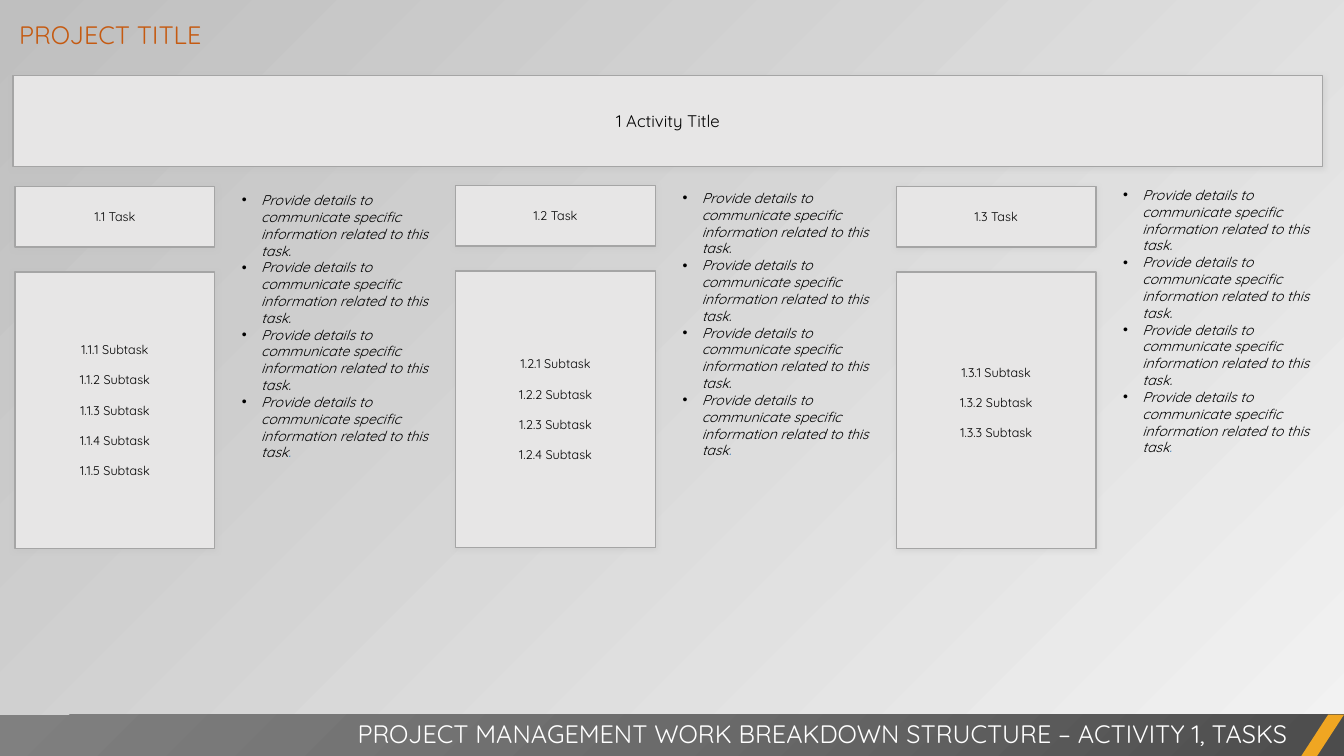
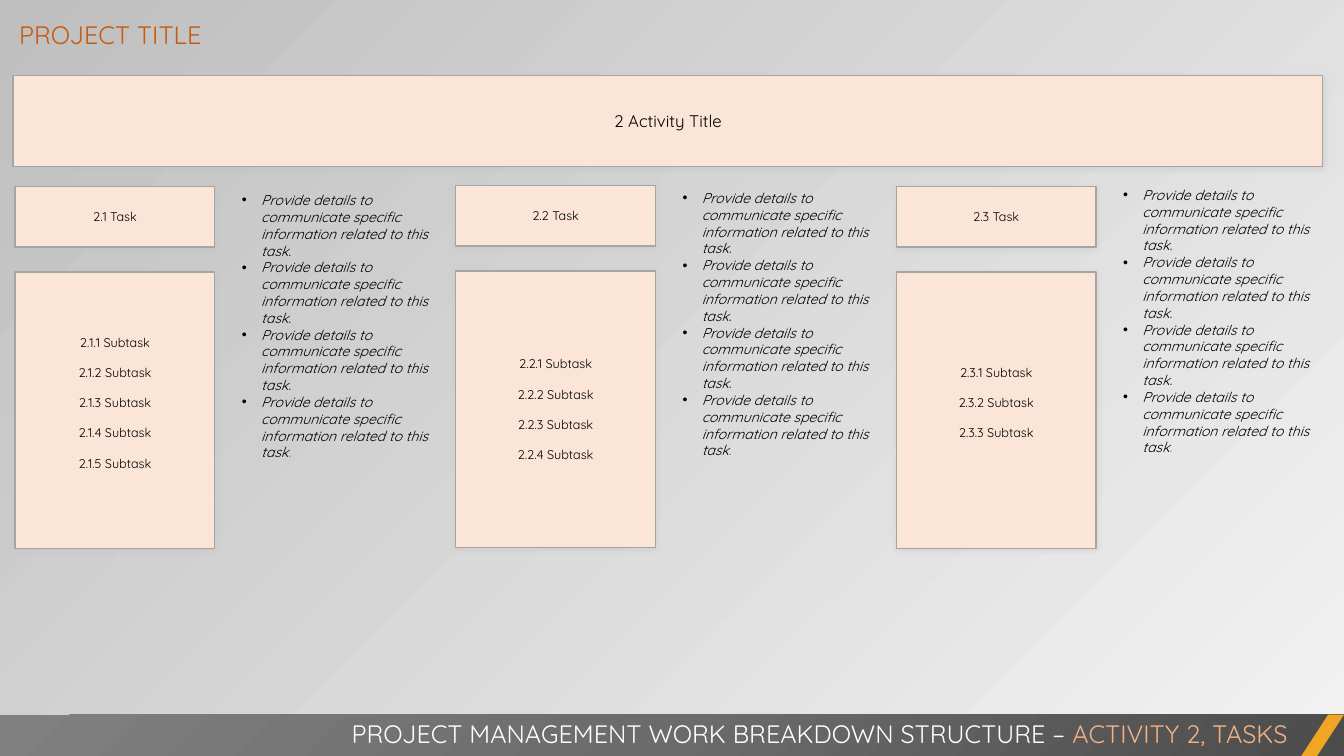
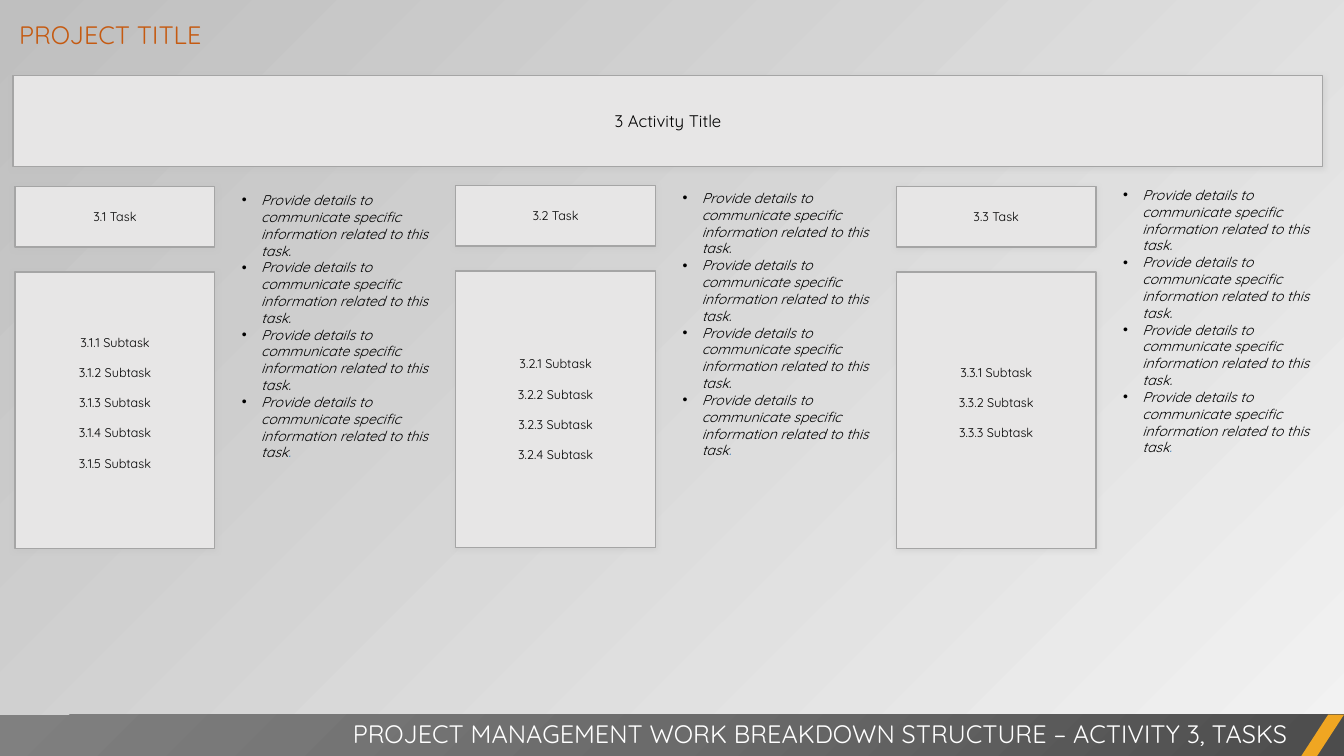
import dataclasses

import pptx
import pptx.dml.color
import pptx.enum.shapes
import pptx.enum.text
import pptx.oxml
import pptx.oxml.ns
import pptx.util

Inches, Pt = pptx.util.Inches, pptx.util.Pt
RGB = pptx.dml.color.RGBColor.from_string
SHAPE = pptx.enum.shapes.MSO_SHAPE
ALIGN = pptx.enum.text.PP_ALIGN
ANCHOR = pptx.enum.text.MSO_ANCHOR
NS = pptx.oxml.ns.nsdecls("a")


@dataclasses.dataclass(frozen=True)
class Theme:
    font: str = "Quicksand"
    head: int = 18
    lead: int = 12
    note: int = 10
    task: int = 9
    black: str = "000000"
    white: str = "FFFFFF"
    grey: str = "E7E6E6"
    peach: str = "FBE5D6"
    edge: str = "A5A5A5"
    rust: str = "C55A11"
    salmon: str = "F4B183"
    blue: str = "2E75B6"
    gold: str = "F0A622"
    light: str = "F2F2F2"
    dark: str = "BFBFBF"
    band: tuple = ("4C4C4C", "6B6B6B", "808080")


theme = Theme()
WIDE, HIGH = 13.33, 7.5
PITCH, LEFT, WIDTH = 4.37, 0.15, 1.98
FOOT, DEEP = 7.09, 0.42
COLS = [LEFT + PITCH * n for n in range(3)]
TASK_TOPS = (1.85, 1.84, 1.85)
NOTE_TOPS = (1.85, 1.83, 1.8)
COUNTS = (5, 4, 3)
NOTE = "Provide details to communicate specific information related to this task"
HEAD = "PROJECT MANAGEMENT WORK BREAKDOWN STRUCTURE – "


def ink(frame, size, color, align=ALIGN.LEFT, anchor=ANCHOR.TOP, gap=0, italic=False):
    """Format all text of a frame; gap is the space between paragraphs."""
    frame.word_wrap = True
    frame.auto_size = pptx.enum.text.MSO_AUTO_SIZE.NONE
    frame.vertical_anchor = anchor
    for n, para in enumerate(frame.paragraphs):
        para.alignment = align
        para.space_before = Pt(gap if n else 0)
        for run in para.runs:
            font = run.font
            font.name, font.size = theme.font, Pt(size)
            font.bold, font.italic = False, italic
            font.color.rgb = RGB(color)


def box(slide, area, fill, text, size, gap=0):
    """Add a bordered, softly shadowed rectangle with centred text."""
    shape = slide.shapes.add_shape(SHAPE.RECTANGLE, *map(Inches, area))
    shape.fill.solid()
    shape.fill.fore_color.rgb = RGB(fill)
    shape.line.color.rgb = RGB(theme.edge)
    shape.line.width = Pt(1)
    shape.element.spPr.append(pptx.oxml.parse_xml(
        f'<a:effectLst {NS}><a:outerShdw blurRad="{Pt(4)}" dist="{Pt(1)}" '
        f'dir="5400000" rotWithShape="0"><a:srgbClr val="{theme.dark}">'
        '<a:alpha val="40000"/></a:srgbClr></a:outerShdw></a:effectLst>'))
    shape.text_frame.text = text
    ink(shape.text_frame, size, theme.black, ALIGN.CENTER, ANCHOR.MIDDLE, gap)
    return shape


deck = pptx.Presentation()
deck.slide_width, deck.slide_height = Inches(WIDE), Inches(HIGH)

# Shared background and placeholder places
back = deck.slide_master.background.fill
back.gradient()
back.gradient_angle = 135
for stop, color in zip(back.gradient_stops, (theme.light, theme.dark)):
    stop.color.rgb = RGB(color)

layout = deck.slide_layouts.get_by_name("Comparison")
places = [(2.62, 7.08, 10.25, 0.4), (0.09, 0.14, 10.11, 0.4)]
places += [(x + 2.15, y, 2.06, 3) for x, y in zip(COLS, NOTE_TOPS)]
for holder in layout.placeholders:
    if holder.placeholder_format.idx < len(places):
        area = places[holder.placeholder_format.idx]
        holder.left, holder.top, holder.width, holder.height = map(Inches, area)

slides = [deck.slides.add_slide(layout) for _ in range(3)]

# Footer band and wedge, drawn once and moved to the layout
draw = slides[0].shapes
band = draw.add_shape(SHAPE.RECTANGLE, 0, Inches(FOOT), Inches(WIDE), Inches(DEEP))
stops = "".join(f'<a:gs pos="{n * 50000}"><a:srgbClr val="{color}"/></a:gs>'
                for n, color in enumerate(theme.band))
band.element.spPr.append(pptx.oxml.parse_xml(
    f'<a:gradFill {NS} rotWithShape="1"><a:gsLst>{stops}</a:gsLst><a:path path="circle">'
    '<a:fillToRect l="100000" t="100000"/></a:path></a:gradFill>'))
wedge = draw.add_shape(SHAPE.PARALLELOGRAM, Inches(WIDE - 0.43), Inches(FOOT),
                       Inches(0.43), Inches(DEEP))
wedge.adjustments[0] = 0.65
wedge.fill.solid()
wedge.fill.fore_color.rgb = RGB(theme.gold)
for n, shape in enumerate((band, wedge)):
    shape.line.fill.background()
    shape.shadow.inherit = False
    shape.element.nvSpPr.cNvPr.set("id", str(20 + n))
    layout.shapes.element.insert(2 + n, shape.element)

for act, slide in enumerate(slides, 1):
    accent = act == 2
    fill = theme.peach if accent else theme.grey

    title = slide.shapes.title.text_frame
    title.text = HEAD
    title.paragraphs[0].add_run().text = f"ACTIVITY {act}, TASKS"
    ink(title, theme.head, theme.white, ALIGN.RIGHT)
    if accent:
        title.paragraphs[0].runs[1].font.color.rgb = RGB(theme.salmon)

    project = slide.placeholders[1].text_frame
    project.text = "PROJECT TITLE"
    ink(project, theme.head, theme.rust)

    box(slide, (0.13, 0.75, 12.99, 0.9), fill, f"{act} Activity Title", theme.lead)

    for col, (x, y, count) in enumerate(zip(COLS, TASK_TOPS, COUNTS), 1):
        code = f"{act}.{col}"
        box(slide, (x, y, WIDTH, 0.6), fill, f"{code} Task", theme.task)
        subs = "\n".join(f"{code}.{n} Subtask" for n in range(1, count + 1))
        card = box(slide, (x, y + 0.85, WIDTH, 2.74), fill, subs, theme.task, 10.8)
        if col == 3 or (col == 1 and act > 1):
            card.text_frame.margin_bottom = Inches(0.2)

        notes = slide.placeholders[col + 1].text_frame
        notes.text = "\n".join([NOTE + "."] * 3 + [NOTE])
        dot = notes.paragraphs[-1].add_run()
        dot.text = "."
        ink(notes, theme.note, theme.black, italic=True)
        dot.font.color.rgb = RGB(theme.blue)
        for para in notes.paragraphs:
            props = para._p.get_or_add_pPr()
            props.set("marL", str(Inches(0.19)))
            props.set("indent", str(-Inches(0.19)))
            props.append(pptx.oxml.parse_xml(f'<a:buChar {NS} char="•"/>'))

deck.save("out.pptx")
